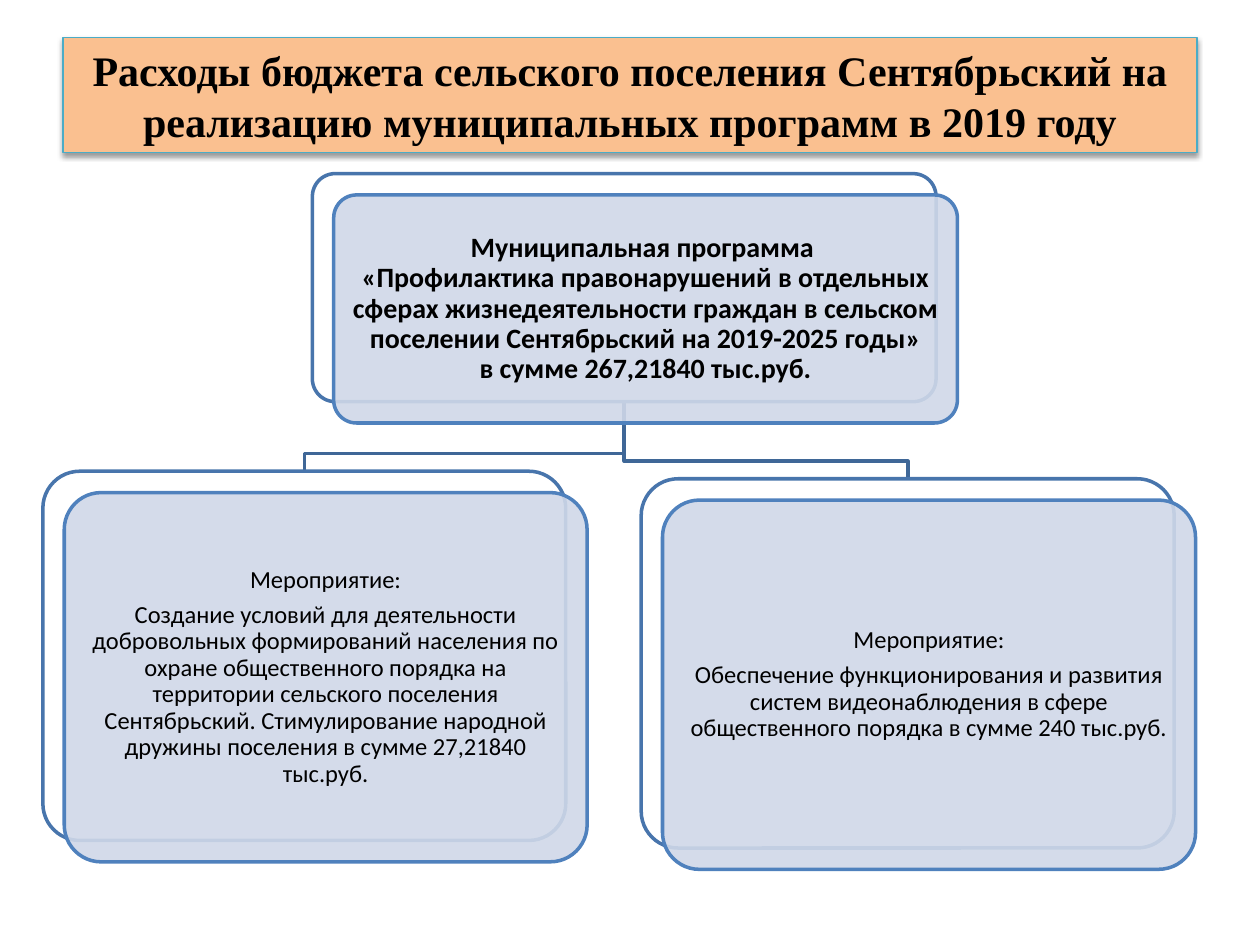
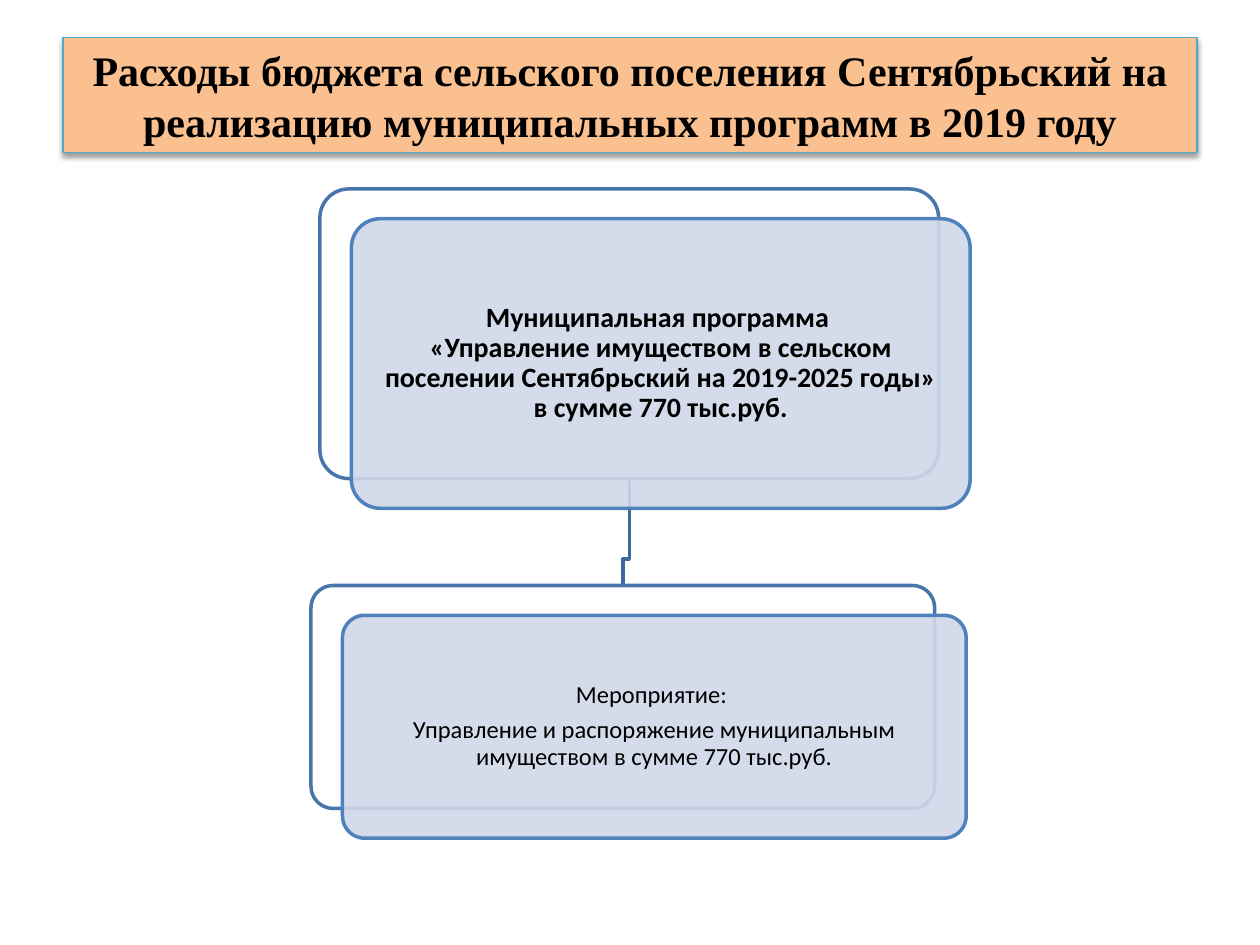
"""Builds two slides on municipal programme spending as small hierarchy charts."""
from lxml.etree import SubElement
from pptx import Presentation
from pptx.dml.color import RGBColor
from pptx.enum.shapes import MSO_SHAPE
from pptx.enum.text import MSO_ANCHOR, PP_ALIGN
from pptx.oxml.ns import qn
from pptx.util import Pt

BLACK = RGBColor(0x00, 0x00, 0x00)
WHITE = RGBColor(0xFF, 0xFF, 0xFF)
PEACH = RGBColor(0xFA, 0xC0, 0x90)
TEAL = RGBColor(0x4B, 0xAC, 0xC6)
PALE_BLUE = RGBColor(0xD0, 0xD8, 0xE8)
CARD_BLUE = RGBColor(0x4F, 0x81, 0xBD)
BACK_BLUE = RGBColor(0x48, 0x75, 0xAC)
LINK_BLUE = RGBColor(0x3F, 0x67, 0x97)

TITLE = ("Расходы бюджета сельского поселения Сентябрьский на "
         "реализацию муниципальных программ в 2019 году")
TITLE_BOX = (36, 21.6, 648, 65.5)

PROGRAM_STYLE = {"size": 16, "bold": True, "inset": 4.8, "after": 0}
ACTIVITY_STYLE = {"size": 14, "bold": False, "inset": 4.2, "after": 4.9}

SLIDES = [
    {
        "offset": (12.2, 12.2),
        "bend": 10,
        "program": ((178.5, 99.2, 356.4, 130.3), [
            "Муниципальная программа ",
            "«Профилактика правонарушений в отдельных сферах жизнедеятельности "
            "граждан в сельском поселении Сентябрьский на 2019-2025 годы»",
            "в сумме 267,21840 тыс.руб.",
        ]),
        "activities": [
            ((24.5, 269.3, 298.8, 211), [
                "Мероприятие:",
                "Создание условий для деятельности добровольных формирований "
                "населения по охране общественного порядка на территории сельского "
                "поселения Сентябрьский. Стимулирование народной дружины поселения "
                "в сумме 27,21840 тыс.руб.",
            ]),
            ((366.4, 273.6, 304.6, 211), [
                "Мероприятие:",
                "Обеспечение функционирования и развития систем видеонаблюдения "
                "в сфере общественного порядка в сумме 240 тыс.руб.",
            ]),
        ],
    },
    {
        "offset": (18, 17),
        "bend": 15,
        "program": ((182.8, 108, 353.6, 165.5), [
            "Муниципальная программа ",
            "«Управление имуществом в сельском поселении Сентябрьский "
            "на 2019-2025 годы»",
            "в сумме 770 тыс.руб.",
        ]),
        "activities": [
            ((177.7, 334.6, 356.4, 127.4), [
                "Мероприятие: ",
                "Управление и распоряжение муниципальным имуществом "
                "в сумме 770 тыс.руб.",
            ]),
        ],
    },
]


def add_box(slide, kind, box, fill, line, width):
    shape = slide.shapes.add_shape(kind, *map(Pt, box))
    shape.shadow.inherit = False
    shape.fill.solid()
    shape.fill.fore_color.rgb = fill
    shape.line.color.rgb = line
    shape.line.width = Pt(width)
    return shape


def write(shape, lines, font_name, size, bold, after=0, spacing=1.0):
    frame = shape.text_frame
    frame.word_wrap = True
    frame.vertical_anchor = MSO_ANCHOR.MIDDLE
    frame.text = "\n".join(lines)
    for paragraph in frame.paragraphs:
        paragraph.alignment = PP_ALIGN.CENTER
        paragraph.line_spacing = spacing
        paragraph.space_after = Pt(after)
        for run in paragraph.runs:
            run.font.name = font_name
            run.font.size = Pt(size)
            run.font.bold = bold
            run.font.color.rgb = BLACK


def add_title(slide):
    title = add_box(slide, MSO_SHAPE.RECTANGLE, TITLE_BOX, PEACH, TEAL, 0.75)
    write(title, [TITLE], "Times New Roman", 24, True)
    effects = title.element.spPr.find(qn("a:effectLst"))
    shadow = SubElement(effects, qn("a:outerShdw"), blurRad=str(Pt(3.1)),
                        dist=str(Pt(1.6)), dir="5400000", rotWithShape="0")
    color = SubElement(shadow, qn("a:srgbClr"), val=str(BLACK))
    SubElement(color, qn("a:alpha"), val="38000")


def add_link(slide, parent, child, bend):
    start_x, start_y = parent[0] + parent[2] / 2, parent[1] + parent[3]
    end_x, end_y = child[0] + child[2] / 2, child[1]
    corners = [(start_x, end_y - bend), (end_x, end_y - bend), (end_x, end_y)]
    builder = slide.shapes.build_freeform(Pt(start_x), Pt(start_y))
    builder.add_line_segments([(Pt(x), Pt(y)) for x, y in corners], close=False)
    link = builder.convert_to_shape()
    link.shadow.inherit = False
    link.fill.background()
    link.line.color.rgb = LINK_BLUE
    link.line.width = Pt(2)


def add_card(slide, box, lines, offset, style):
    left, top, width, height = box
    front_box = (left + offset[0], top + offset[1], width, height)
    back = add_box(slide, MSO_SHAPE.ROUNDED_RECTANGLE, box, WHITE, BACK_BLUE, 2)
    front = add_box(slide, MSO_SHAPE.ROUNDED_RECTANGLE, front_box,
                    PALE_BLUE, CARD_BLUE, 2)
    for shape in (back, front):
        shape.adjustments[0] = 0.1
    color = front.element.spPr.find(qn("a:solidFill")).find(qn("a:srgbClr"))
    SubElement(color, qn("a:alpha"), val="90000")
    frame = front.text_frame
    frame.margin_left = frame.margin_right = Pt(style["inset"])
    frame.margin_top = frame.margin_bottom = Pt(style["inset"])
    write(front, lines, "Calibri", style["size"], style["bold"], style["after"], 0.9)


def main():
    presentation = Presentation()
    presentation.slide_width, presentation.slide_height = Pt(720), Pt(540)
    for content in SLIDES:
        slide = presentation.slides.add_slide(presentation.slide_layouts[6])
        program_box, program_lines = content["program"]
        for activity_box, _ in reversed(content["activities"]):
            add_link(slide, program_box, activity_box, content["bend"])
        add_card(slide, program_box, program_lines, content["offset"], PROGRAM_STYLE)
        for activity_box, activity_lines in content["activities"]:
            add_card(slide, activity_box, activity_lines, content["offset"],
                     ACTIVITY_STYLE)
        add_title(slide)
    presentation.save("out.pptx")


if __name__ == "__main__":
    main()
